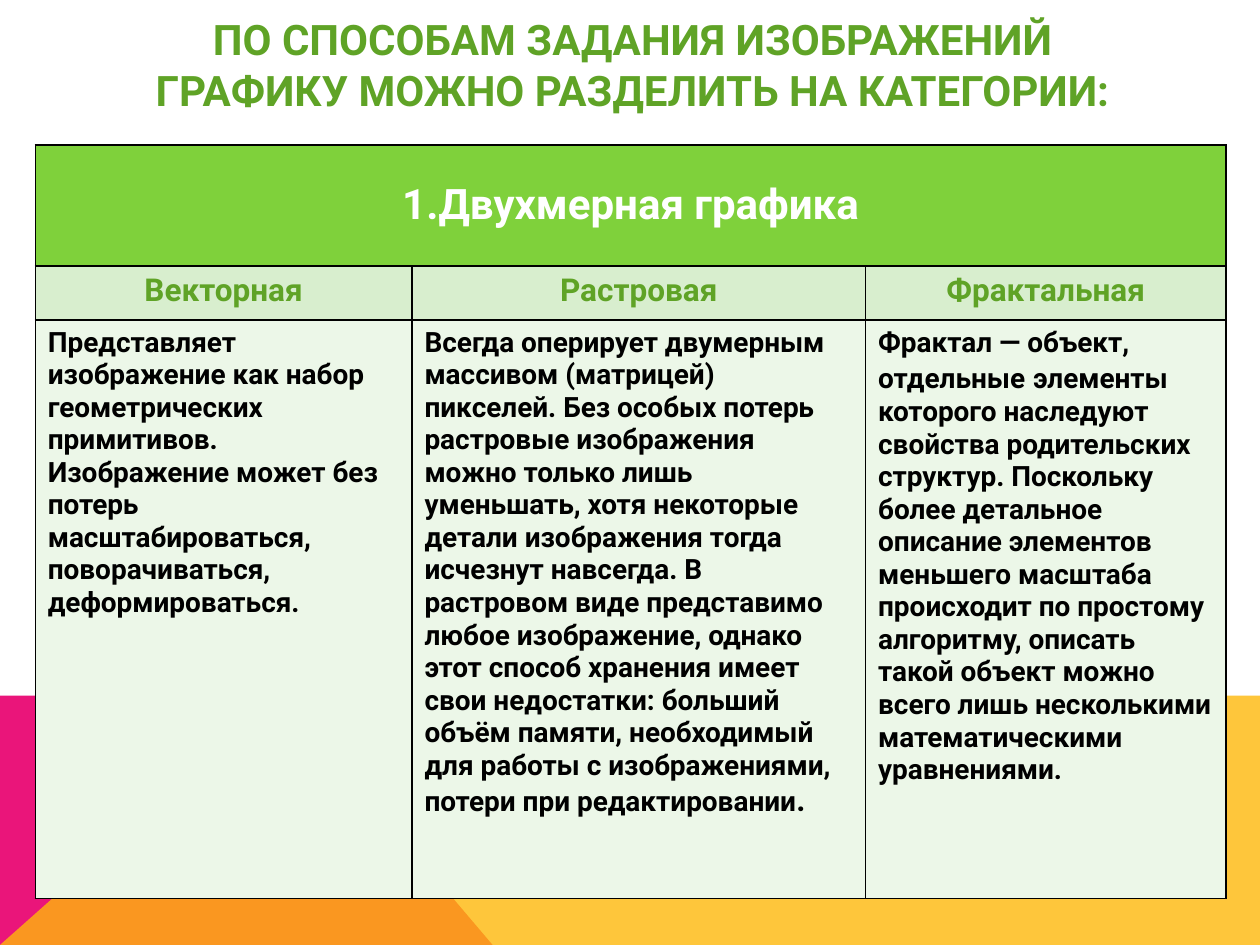
from lxml import etree
from pptx import Presentation
from pptx.dml.color import RGBColor
from pptx.enum.text import MSO_ANCHOR, PP_ALIGN
from pptx.oxml.ns import qn
from pptx.util import Inches, Pt

CENTER, LEFT = PP_ALIGN.CENTER, PP_ALIGN.LEFT
MIDDLE, TOP = MSO_ANCHOR.MIDDLE, MSO_ANCHOR.TOP
FONT = "Roboto"
GREEN, DARK_GREEN = "7FD13B", "5FA326"
HEAD_FILL, BODY_FILL = "D8EECE", "ECF7E8"
BLACK, WHITE = "000000", "FFFFFF"
PINK, YELLOW = "EA157A", "FEB80A"

TITLE = "ПО СПОСОБАМ ЗАДАНИЯ ИЗОБРАЖЕНИЙ ГРАФИКУ МОЖНО РАЗДЕЛИТЬ НА КАТЕГОРИИ:"
GROUP = "1.Двухмерная графика"
COLUMN_WIDTHS = [2.99, 3.6, 2.86]
ROW_HEIGHTS = [0.96, 0.43, 4.59]
CATEGORIES = [
    ("Векторная", [
        ("Представляет изображение как набор геометрических примитивов. Изображение "
         "может без потерь масштабироваться, поворачиваться, деформироваться.", 16),
    ]),
    ("Растровая", [
        ("Всегда оперирует двумерным массивом (матрицей) пикселей. Без особых потерь "
         "растровые изображения можно только лишь уменьшать, хотя некоторые детали "
         "изображения тогда исчезнут навсегда. В растровом виде представимо любое "
         "изображение, однако этот способ хранения имеет свои недостатки: больший объём "
         "памяти, необходимый для работы с изображениями, потери при редактировании", 16),
        (".", 18),
    ]),
    ("Фрактальная", [
        ("Фрактал — объект, отдельные", 16),
        (" ", 18),
        ("элементы которого наследуют свойства родительских структур. Поскольку более "
         "детальное описание элементов меньшего масштаба происходит по простому "
         "алгоритму, описать такой объект можно всего лишь несколькими математическими "
         "уравнениями.", 16),
    ]),
]


def rgb(value):
    """Turn a hex string into a colour."""
    return RGBColor.from_string(value)


def write(frame, spans, color, align):
    """Write bold (text, size) spans into the first paragraph of a frame."""
    para = frame.paragraphs[0]
    para.alignment = align
    for text, size in spans:
        span = para.add_run()
        span.text = text
        span.font.name = FONT
        span.font.size = Pt(size)
        span.font.bold = True
        span.font.color.rgb = rgb(color)


def add_polygon(page, points, color, opacity=100):
    """Draw a filled polygon without outline through points in inches."""
    corners = [(Inches(x), Inches(y)) for x, y in points]
    builder = page.shapes.build_freeform(*corners[0])
    builder.add_line_segments(corners[1:], close=True)
    shape = builder.convert_to_shape()
    shape.shadow.inherit = False
    shape.line.fill.background()
    shape.fill.solid()
    shape.fill.fore_color.rgb = rgb(color)
    if opacity < 100:
        tint = shape.fill._xPr.find(".//" + qn("a:srgbClr"))
        etree.SubElement(tint, qn("a:alpha"), val=str(opacity * 1000))


def add_backdrop(page, left, top, width, height):
    """Place the pink wedge and the translucent yellow band over it."""
    right, bottom = left + width, top + height
    bend = (left + 2.23, top)
    add_polygon(page, [(left, bottom), (left, top), bend, (left + 3.91, bottom)], PINK)
    add_polygon(page, [(left, bottom), bend, (right, top), (right, bottom)], YELLOW, 80)


def add_title(page, left, top, width, height):
    """Place the centred heading."""
    box = page.shapes.add_textbox(Inches(left), Inches(top), Inches(width), Inches(height))
    box.text_frame.word_wrap = True
    box.text_frame.vertical_anchor = MIDDLE
    write(box.text_frame, [(TITLE, 24)], DARK_GREEN, CENTER)


def style_cell(cell, fill, anchor=TOP):
    """Give a cell thin black borders, a fill and an anchor."""
    properties = cell._tc.get_or_add_tcPr()
    for side in ("lnL", "lnR", "lnT", "lnB"):
        line = etree.SubElement(properties, qn("a:" + side), w=str(Pt(1)))
        solid = etree.SubElement(line, qn("a:solidFill"))
        etree.SubElement(solid, qn("a:srgbClr"), val=BLACK)
    cell.fill.solid()
    cell.fill.fore_color.rgb = rgb(fill)
    cell.vertical_anchor = anchor


def add_categories(page, left, top, width, height):
    """Place the table of graphics categories."""
    table = page.shapes.add_table(
        len(ROW_HEIGHTS), len(COLUMN_WIDTHS),
        Inches(left), Inches(top), Inches(width), Inches(height)).table
    for column, size in zip(table.columns, COLUMN_WIDTHS):
        column.width = Inches(size)
    for row, size in zip(table.rows, ROW_HEIGHTS):
        row.height = Inches(size)
    for index, (name, description) in enumerate(CATEGORIES):
        group, head, body = (table.cell(row, index) for row in range(3))
        style_cell(group, GREEN, MIDDLE)
        style_cell(head, HEAD_FILL)
        style_cell(body, BODY_FILL)
        write(head.text_frame, [(name, 18)], DARK_GREEN, CENTER)
        write(body.text_frame, description, BLACK, LEFT)
    banner = table.cell(0, 0)
    banner.merge(table.cell(0, len(CATEGORIES) - 1))
    write(banner.text_frame, [(GROUP, 24)], WHITE, CENTER)


def main():
    """Build the slide and save the deck."""
    deck = Presentation()
    deck.slide_width, deck.slide_height = Inches(10), Inches(7.5)
    page = deck.slides.add_slide(deck.slide_layouts[6])
    add_backdrop(page, 0, 5.52, 10, 1.98)
    add_title(page, 0.91, 0.21, 8.22, 0.6)
    add_categories(page, 0.28, 1.15, sum(COLUMN_WIDTHS), sum(ROW_HEIGHTS))
    deck.save("out.pptx")


if __name__ == "__main__":
    main()
